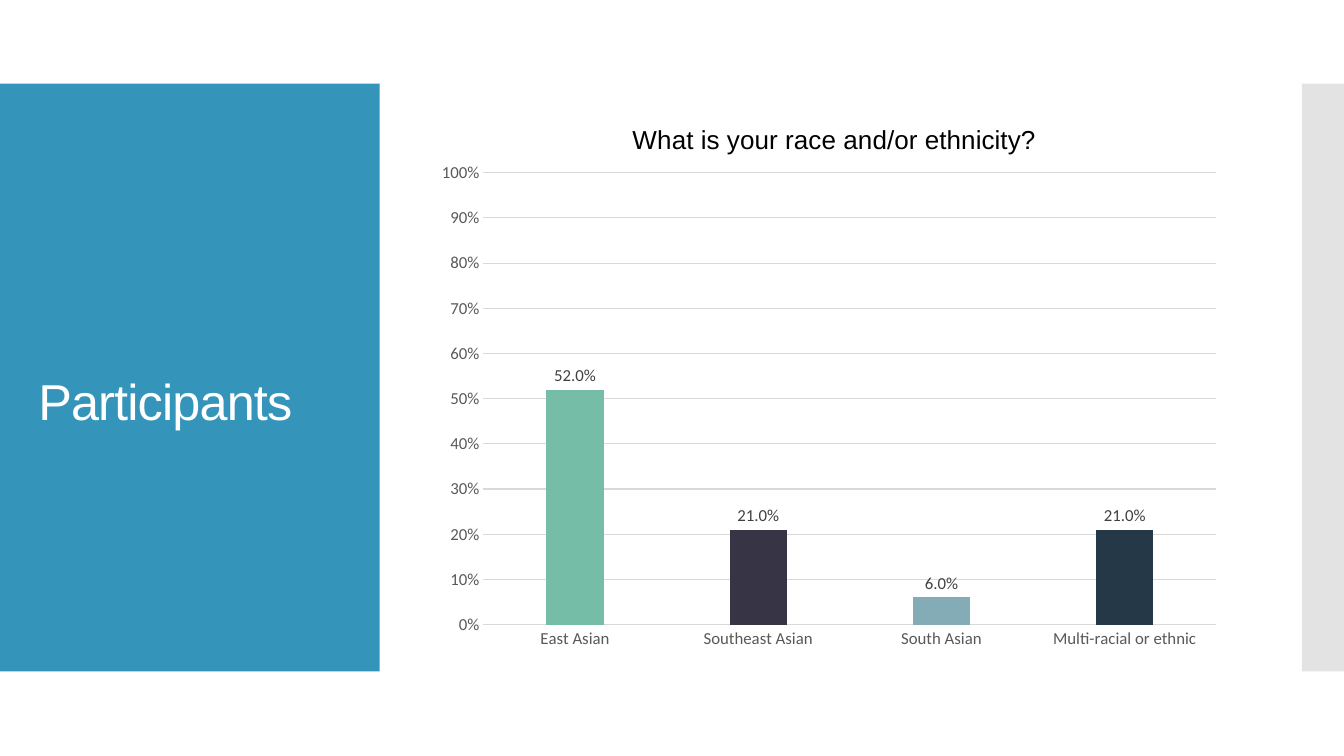
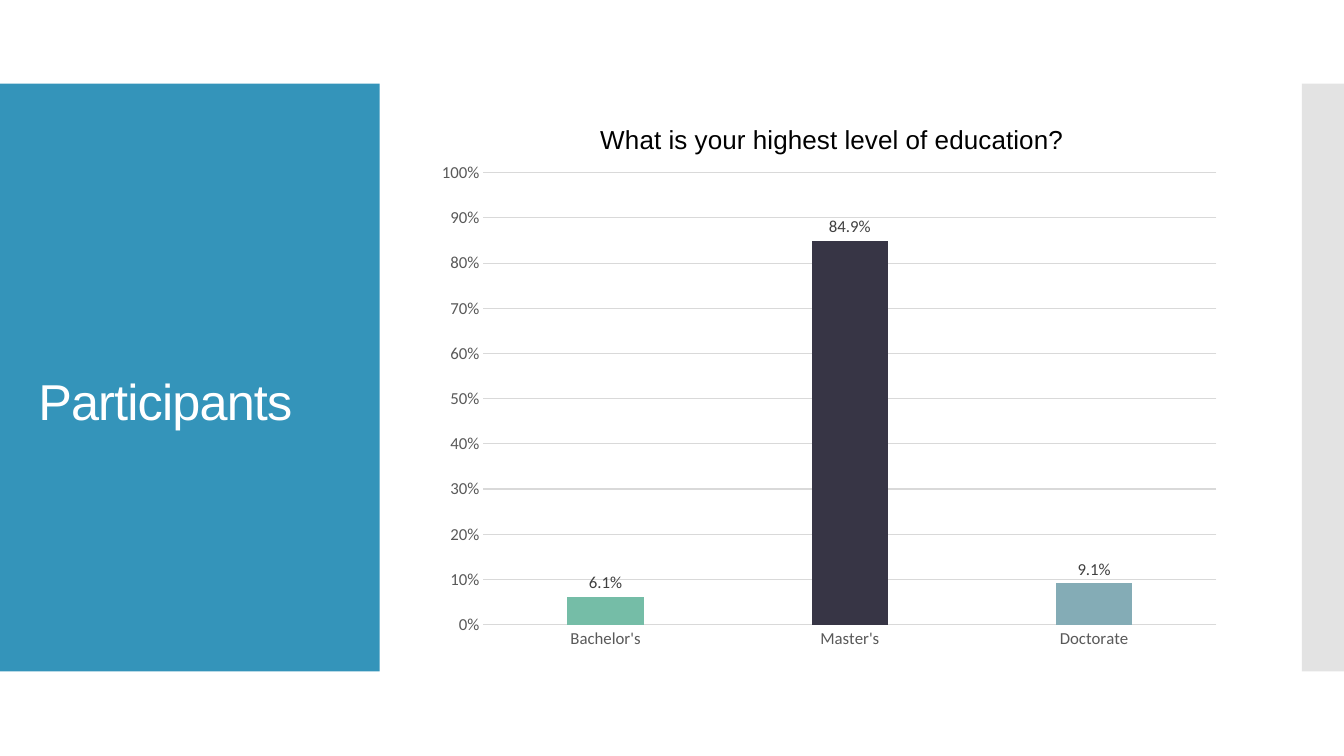
from lxml import etree
from pptx import Presentation
from pptx.chart import data as chart_data
from pptx.dml.color import RGBColor
from pptx.enum import chart as ch, shapes, text
from pptx.oxml import parse_xml
from pptx.oxml import ns
from pptx.util import Cm, Pt

COLORS = {
    "panel": "3494BA", "edge": "C8C8C8", "white": "FFFFFF", "black": "000000",
    "axis_text": "595959", "label_text": "404040", "grid": "D9D9D9",
}
BAR_COLORS = ["75BDA7", "373545", "84ACB6", "253848"]
SURVEY = [
    ("What is your race and/or ethnicity?", 0.25,
     {"East Asian": 0.52, "Southeast Asian": 0.21, "South Asian": 0.06,
      "Multi-racial or ethnic": 0.21}),
    ("What is your highest level of education?", 0.21,
     {"Bachelor's": 0.061, "Master's": 0.849, "Doctorate": 0.091}),
]
BAND_TOP, BAND_HEIGHT = 2.11, 14.81


def rgb(name):
    return RGBColor.from_string(COLORS[name])


def style(font, size, color, face):
    font.size, font.name, font.bold = Pt(size), face, False
    font.color.rgb = rgb(color)


def write(frame, words, size=18, color="black", face="Arial", line=None, tracking=None):
    paragraph = frame.paragraphs[0]
    paragraph.line_spacing = line
    run = paragraph.add_run()
    run.text = words
    style(run.font, size, color, face)
    if tracking is not None:
        run.font._element.set("spc", str(int(tracking * 100)))
    return paragraph


def add_band(slide, left, width, color, opacity=None):
    band = slide.shapes.add_shape(
        shapes.MSO_SHAPE.RECTANGLE, Cm(left), Cm(BAND_TOP), Cm(width), Cm(BAND_HEIGHT))
    band.shadow.inherit = False
    band.line.fill.background()
    band.fill.solid()
    band.fill.fore_color.rgb = rgb(color)
    if opacity is not None:
        fill = band.element.spPr.find(ns.qn("a:solidFill"))
        etree.SubElement(fill[0], ns.qn("a:alpha")).set("val", str(opacity * 1000))
    slide.shapes.title.element.addprevious(band.element)


def add_heading(slide, words):
    heading = slide.shapes.title
    heading.left, heading.top = Cm(0.71), Cm(3.12)
    heading.width, heading.height = Cm(8.18), Cm(12.78)
    frame = heading.text_frame
    frame.word_wrap = True
    frame.vertical_anchor = text.MSO_ANCHOR.MIDDLE
    frame.margin_top = Cm(1.5)
    paragraph = write(frame, words, size=36, color="white", line=0.9, tracking=-0.6)
    paragraph.alignment = text.PP_ALIGN.LEFT


def set_layout(parent, index, **values):
    for old in parent.findall(ns.qn("c:layout")):
        parent.remove(old)
    target = '<c:layoutTarget val="inner"/>' if "w" in values else ""
    modes = "".join(f'<c:{key}Mode val="edge"/>' for key in ("x", "y"))
    sizes = "".join(f'<c:{key} val="{value}"/>' for key, value in values.items())
    parent.insert(index, parse_xml(
        f'<c:layout {ns.nsdecls("c")}><c:manualLayout>{target}{modes}{sizes}'
        '</c:manualLayout></c:layout>'))


def format_axis(axis):
    axis.major_tick_mark = axis.minor_tick_mark = ch.XL_TICK_MARK.NONE
    style(axis.tick_labels.font, 12, "axis_text", "Calibri")


def draw_line(line):
    line.color.rgb = rgb("grid")
    line.width = Pt(0.75)


def add_survey_chart(slide, question, question_left, answers):
    shares = chart_data.CategoryChartData(number_format="0.0%")
    shares.categories = list(answers)
    shares.add_series("Series 1", list(answers.values()))
    chart = slide.shapes.add_chart(
        ch.XL_CHART_TYPE.COLUMN_CLUSTERED,
        Cm(10.74), Cm(2.39), Cm(20.32), Cm(14.22), shares).chart
    chart.has_legend = False
    style(chart.font, 10, "black", "Calibri")
    chart.has_title = True
    write(chart.chart_title.text_frame, question, size=18.6)
    chart.chart_title.include_in_layout = False
    set_layout(chart.element.find(".//" + ns.qn("c:title")), 1, x=question_left, y=0.04)
    set_layout(chart.element.find(".//" + ns.qn("c:plotArea")), 0,
               x=0.071, y=0.138, w=0.909, h=0.801)

    format_axis(chart.category_axis)
    draw_line(chart.category_axis.format.line)
    share_axis = chart.value_axis
    format_axis(share_axis)
    share_axis.format.line.fill.background()
    share_axis.minimum_scale, share_axis.maximum_scale = 0, 1
    share_axis.major_unit = 0.1
    share_axis.tick_labels.number_format = "0%"
    share_axis.tick_labels.number_format_is_linked = False
    share_axis.has_major_gridlines = True
    draw_line(share_axis.major_gridlines.format.line)

    plot = chart.plots[0]
    plot.gap_width, plot.overlap, plot.vary_by_categories = 219, -27, False
    plot.has_data_labels = True
    labels = plot.data_labels
    labels.show_value = True
    labels.position = ch.XL_LABEL_POSITION.OUTSIDE_END
    labels.number_format, labels.number_format_is_linked = "0.0%", False
    style(labels.font, 12, "label_text", "Calibri")
    for index, color in enumerate(BAR_COLORS[:len(answers)]):
        fill = plot.series[0].points[index].format.fill
        fill.solid()
        fill.fore_color.rgb = RGBColor.from_string(color)


def main():
    deck = Presentation()
    deck.slide_width, deck.slide_height = Cm(33.87), Cm(19.05)
    for question, question_left, answers in SURVEY:
        slide = deck.slides.add_slide(deck.slide_layouts[5])
        add_band(slide, 0, 9.57, "panel")
        add_band(slide, 32.81, 1.06, "edge", opacity=50)
        add_heading(slide, "Participants")
        add_survey_chart(slide, question, question_left, answers)
    deck.save("out.pptx")


if __name__ == "__main__":
    main()
